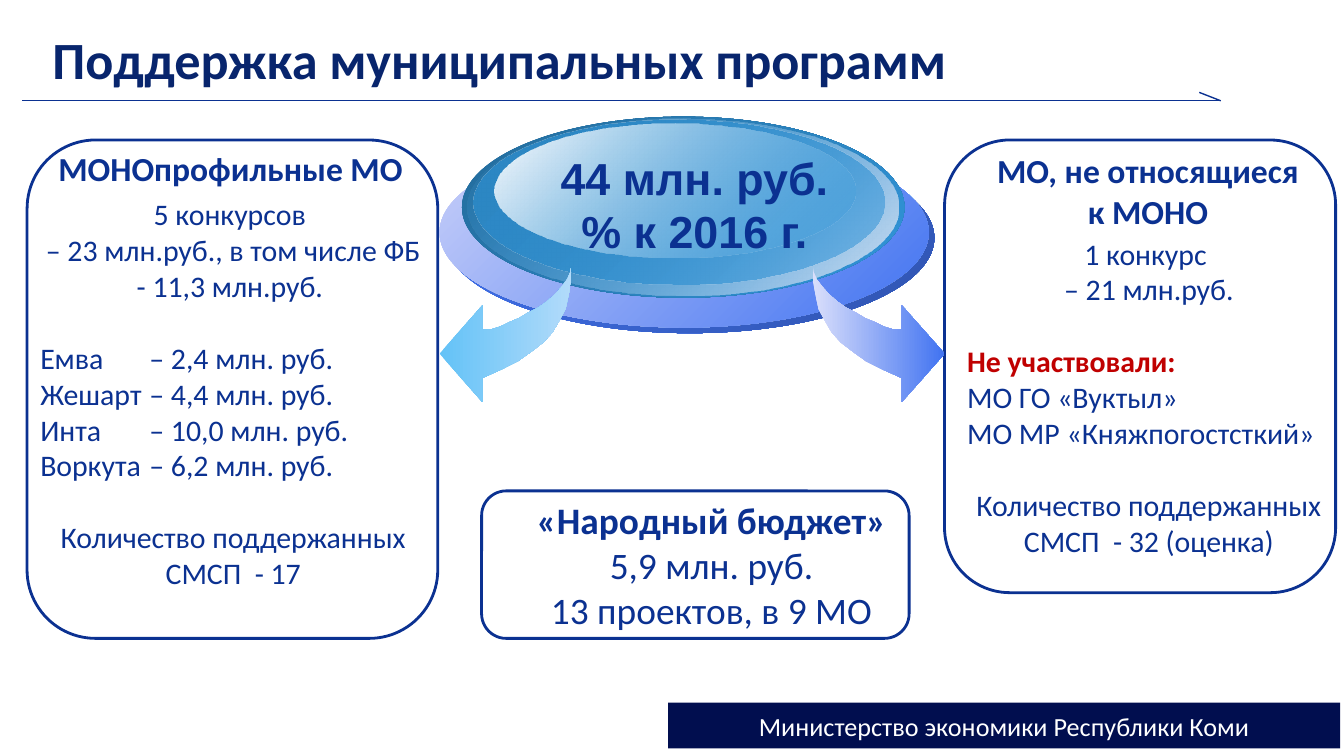
from dataclasses import dataclass

from lxml.etree import SubElement
from pptx import Presentation
from pptx.dml.color import RGBColor
from pptx.enum.shapes import MSO_CONNECTOR, MSO_SHAPE
from pptx.enum.text import MSO_ANCHOR, PP_ALIGN
from pptx.oxml.ns import qn
from pptx.util import Pt


@dataclass(frozen=True)
class Theme:
    """Colours, fonts and type sizes of the slide."""
    navy: str = "0B3191"
    heading: str = "08256D"
    alert: str = "C00000"
    white: str = "FFFFFF"
    footer: str = "010E4F"
    royal: str = "4173F1"
    azure: str = "3195D9"
    body_font: str = "Calibri"
    total_font: str = "Arial"
    title_size: int = 28
    total_size: int = 24
    budget_size: int = 20
    panel_size: int = 18
    body_size: int = 16
    footer_size: int = 14


THEME = Theme()
LINE_GAP = 19.3
ARROW_OUTLINE = [
    (70.6, 0), (70.6, 8), (69, 16), (67.5, 23), (64, 29.5), (60.5, 35.5),
    (55.5, 41), (49, 46), (42, 51), (33, 55.5), (23, 60), (23, 73), (0, 47),
    (23, 21), (23, 34), (27.5, 34), (32.5, 32.5), (37.5, 30), (42.5, 28),
    (47.5, 25), (52.5, 22.5), (57.5, 19), (62, 15), (65.5, 11), (68.5, 7),
    (70, 3.5),
]


def apply_format(target, values):
    """Set each named attribute of the target."""
    for name, value in values.items():
        setattr(target, name, value)


def write_lines(frame, lines, size, color=THEME.navy, font=THEME.body_font,
                bold=False, align=PP_ALIGN.CENTER, anchor=MSO_ANCHOR.TOP, wrap=True):
    """Fill a text frame; each line is a text and its own format values."""
    apply_format(frame, {"word_wrap": wrap, "vertical_anchor": anchor})
    for index, (text, own) in enumerate(lines):
        paragraph = frame.paragraphs[0] if index == 0 else frame.add_paragraph()
        apply_format(paragraph, {"alignment": own.get("align", align),
                                 "space_before": Pt(own.get("gap", 0))})
        if "tab" in own:
            stops = SubElement(paragraph._p.get_or_add_pPr(), qn("a:tabLst"))
            SubElement(stops, qn("a:tab"), pos=str(Pt(own["tab"])), algn="l")
        run = paragraph.add_run()
        run.text = text
        apply_format(run.font, {"name": font, "size": Pt(size),
                                "bold": own.get("bold", bold)})
        run.font.color.rgb = RGBColor.from_string(own.get("color", color))


def add_text(slide, box, lines, size, **style):
    """Add a text box with formatted lines."""
    label = slide.shapes.add_textbox(*map(Pt, box))
    write_lines(label.text_frame, lines, size, **style)


def add_rule(slide, start, end):
    """Add one thin line of the title underline."""
    rule = slide.shapes.add_connector(MSO_CONNECTOR.STRAIGHT, *map(Pt, start + end))
    rule.line.width = Pt(0.75)
    rule.line.color.rgb = RGBColor.from_string(THEME.navy)
    SubElement(rule._element.spPr, qn("a:effectLst"))


def add_panel(slide, box):
    """Add an outlined rounded panel."""
    panel = slide.shapes.add_shape(MSO_SHAPE.ROUNDED_RECTANGLE, *map(Pt, box))
    panel.shadow.inherit = False
    panel.fill.background()
    panel.line.width = Pt(1.5)
    panel.line.color.rgb = RGBColor.from_string(THEME.navy)


def fill_gradient(shape, stops, angle):
    """Fill a shape with two (colour, opacity) stops and no outline."""
    shape.shadow.inherit = False
    shape.line.fill.background()
    shape.fill.gradient()
    shape.fill.gradient_angle = angle
    for stop, (color, _) in zip(shape.fill.gradient_stops, stops):
        stop.color.rgb = RGBColor.from_string(color)
    for element, (_, opacity) in zip(shape._element.spPr.iter(qn("a:srgbClr")), stops):
        if opacity < 100:
            SubElement(element, qn("a:alpha"), val=str(opacity * 1000))


def add_disc(slide, box, start, end):
    """Add one ellipse of the layered disc."""
    disc = slide.shapes.add_shape(MSO_SHAPE.OVAL, *map(Pt, box))
    fill_gradient(disc, (start, end), 315)


def add_curved_arrow(slide, tip_x, top, direction, start, end):
    """Add a curved arrow; direction -1 mirrors it to point right."""
    points = [(Pt(tip_x + direction * x), Pt(top + y)) for x, y in ARROW_OUTLINE]
    builder = slide.shapes.build_freeform(*points[0], scale=1.0)
    builder.add_line_segments(points[1:], close=True)
    fill_gradient(builder.convert_to_shape(), ((start, 100), (end, 100)), 0)


def add_footer(slide, box, text):
    """Add the ministry bar."""
    bar = slide.shapes.add_shape(MSO_SHAPE.RECTANGLE, *map(Pt, box))
    bar.shadow.inherit = False
    bar.line.fill.background()
    bar.fill.solid()
    bar.fill.fore_color.rgb = RGBColor.from_string(THEME.footer)
    write_lines(bar.text_frame, [(text, {})], THEME.footer_size,
                color=THEME.white, anchor=MSO_ANCHOR.MIDDLE)


def main():
    """Build the slide and save it."""
    deck = Presentation()
    apply_format(deck, {"slide_width": Pt(720), "slide_height": Pt(405)})
    slide = deck.slides.add_slide(deck.slide_layouts[6])

    add_rule(slide, (12, 54), (654, 54))
    add_rule(slide, (642.5, 49.5), (654, 54))
    add_text(slide, (21, 15, 606, 33), [("Поддержка муниципальных программ", {})],
             THEME.title_size, color=THEME.heading, bold=True,
             align=PP_ALIGN.LEFT, anchor=MSO_ANCHOR.MIDDLE)

    for box in ((506, 75, 209.5, 242.5), (14.5, 75, 220, 267)):
        add_panel(slide, box)
    add_text(slide, (522, 77, 190, 51),
             [("МО, не относящиеся ", {}), ("к МОНО ", {})], THEME.panel_size, bold=True)
    add_text(slide, (23, 75.5, 201, 29), [("МОНОпрофильные МО", {})],
             THEME.panel_size, bold=True)

    discs = (
        ((238.5, 76.5, 262, 102), (THEME.royal, 100), ("3054B0", 100)),
        ((235.5, 73.5, 262, 102), ("C9D0F9", 100), (THEME.royal, 100)),
        ((247.5, 62.5, 237, 97), ("236B9B", 100), (THEME.azure, 100)),
        ((250.5, 63.5, 231, 95), (THEME.azure, 0), ("D5E1F3", 100)),
        ((253.5, 64, 220.5, 88.5), ("2C87C4", 100), (THEME.azure, 48)),
        ((265, 66, 193.5, 72), (THEME.white, 100), (THEME.azure, 38)),
    )
    for disc in discs:
        add_disc(slide, *disc)
    add_text(slide, (292.5, 77, 159, 65.5), [("44 млн. руб.", {}), ("% к 2016 г.", {})],
             THEME.total_size, font=THEME.total_font, bold=True, wrap=False)

    add_curved_arrow(slide, 235.5, 142.5, 1, "63C2F7", "B2DBFA")
    add_curved_arrow(slide, 506, 142.5, -1, "DADFFB", THEME.royal)

    add_panel(slide, (258, 263, 229, 79))
    add_text(slide, (260, 263, 247, 101.5),
             [("«Народный бюджет» ", {"bold": True}), ("5,9 млн. руб. ", {}),
              ("13 проектов, в 9 МО ", {})], THEME.budget_size)

    left = {"align": PP_ALIGN.LEFT}
    towns = (("Емва", "2,4"), ("Жешарт", "4,4"), ("Инта", "10,0"), ("Воркута", "6,2"))
    grants = [(f"{town}\t– {amount} млн. руб.",
               {**left, "tab": 58.5, "gap": 0 if index else LINE_GAP})
              for index, (town, amount) in enumerate(towns)]
    add_text(slide, (14.5, 101.5, 221, 220.5),
             [("5 конкурсов ", {}),
              ("– 23 млн.руб., в том числе ФБ - 11,3 млн.руб. ", {}),
              *grants,
              ("Количество поддержанных СМСП  - 17", {"gap": LINE_GAP})],
             THEME.body_size)
    add_text(slide, (511, 122.5, 209, 201),
             [("1 конкурс ", {}), ("– 21 млн.руб.", {}),
              ("Не участвовали:",
               {**left, "gap": LINE_GAP, "bold": True, "color": THEME.alert}),
              ("МО ГО «Вуктыл»", left), ("МО МР «Княжпогостсткий»", left),
              ("Количество поддержанных СМСП  - 32 (оценка)", {"gap": LINE_GAP})],
             THEME.body_size)

    add_footer(slide, (358, 376.5, 360, 24.5), "Министерство экономики Республики Коми")
    deck.save("out.pptx")


if __name__ == "__main__":
    main()
